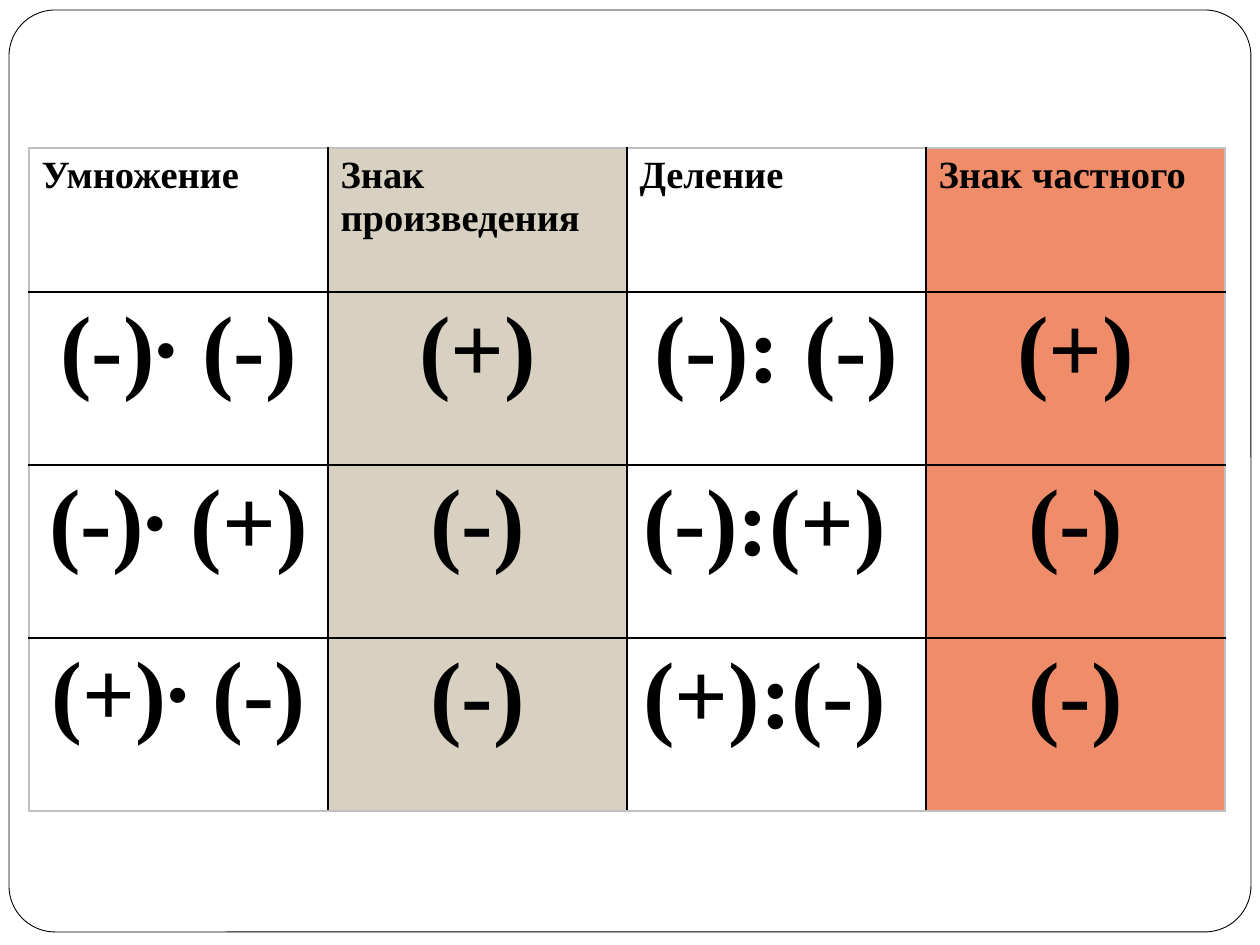
"""Build a slide with a table of sign rules for multiplication and division."""
from lxml import etree
from pptx import Presentation
from pptx.dml.color import RGBColor
from pptx.enum.shapes import MSO_SHAPE
from pptx.enum.text import PP_ALIGN
from pptx.oxml.ns import qn
from pptx.util import Pt

ROUND = MSO_SHAPE.ROUNDED_RECTANGLE
LEFT, CENTER = PP_ALIGN.LEFT, PP_ALIGN.CENTER
BLACK = RGBColor(0x00, 0x00, 0x00)
WHITE = RGBColor(0xFF, 0xFF, 0xFF)
GREY = RGBColor(0xC0, 0xC0, 0xC0)
SAND = RGBColor(0xD8, 0xD0, 0xC0)
CORAL = RGBColor(0xEF, 0x8C, 0x6A)
FONT = "Times New Roman"
PX = 914400 // 126

ROWS = [
    ["Умножение", "Знак произведения", "Деление", "Знак частного"],
    ["(-)∙ (-)", "(+)", "(-): (-)", "(+)"],
    ["(-)∙ (+) ", "(-)", "(-):(+) ", "(-)"],
    ["(+)∙ (-)", "(-)", "(+):(-) ", "(-)"],
]
FILLS = [WHITE, SAND, WHITE, CORAL]
HEIGHTS = [144, 173, 173, 173]
WIDTH = 299
SIZES = {(0, col): 22 for col in range(len(FILLS))} | {(3, 0): 53}


def px(*vals):
    return [val * PX for val in vals]


def write(frame, text, size, align=LEFT, color=BLACK, bold=True):
    par = frame.paragraphs[0]
    par.alignment = align
    run = par.add_run()
    run.text = text
    font = run.font
    font.name, font.size, font.bold = FONT, Pt(size), bold
    font.color.rgb = color


def edge(cell, side, color):
    props = cell._tc.get_or_add_tcPr()
    line = etree.SubElement(props, qn(f"a:ln{side}"), w=str(Pt(1)))
    fill = etree.SubElement(line, qn("a:solidFill"))
    etree.SubElement(fill, qn("a:srgbClr"), val=str(color))


def add_frame(slide):
    frame = slide.shapes.add_shape(ROUND, *px(9, 10, 1242, 922))
    frame.adjustments[0] = 0.05
    frame.shadow.inherit = False
    frame.fill.solid()
    frame.fill.fore_color.rgb = WHITE
    frame.line.color.rgb = BLACK
    frame.line.width = Pt(0.5)


def add_signs(slide):
    high, wide = len(ROWS), len(FILLS)
    box = px(29, 148, WIDTH * wide, sum(HEIGHTS))
    table = slide.shapes.add_table(high, wide, *box).table
    table.first_row = table.horz_banding = False
    for col in table.columns:
        col.width = WIDTH * PX
    for row, height in zip(table.rows, HEIGHTS):
        row.height = height * PX
    for r, texts in enumerate(ROWS):
        for c, text in enumerate(texts):
            cell = table.cell(r, c)
            outer = {"L": c == 0, "R": c == wide - 1,
                     "T": r == 0, "B": r == high - 1}
            for side, out in outer.items():
                edge(cell, side, GREY if out else BLACK)
            cell.fill.solid()
            cell.fill.fore_color.rgb = FILLS[c]
            write(cell.text_frame, text, SIZES.get((r, c), 54),
                  align=CENTER if r else LEFT)


def main():
    deck = Presentation()
    deck.slide_width, deck.slide_height = px(1260, 945)
    slide = deck.slides.add_slide(deck.slide_layouts[6])
    add_frame(slide)
    add_signs(slide)
    deck.save("out.pptx")


if __name__ == "__main__":
    main()
